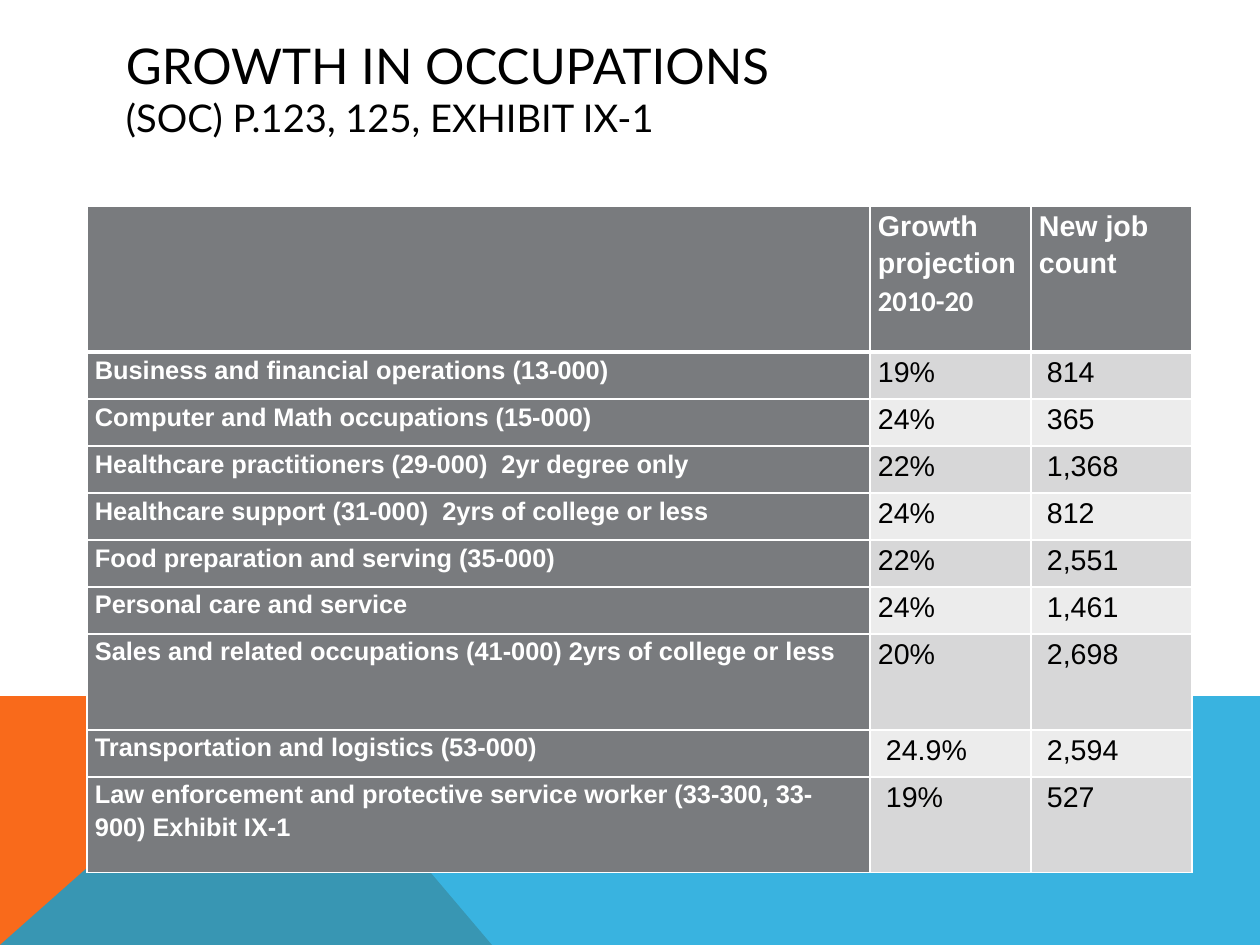
from dataclasses import dataclass

from lxml import etree
from pptx import Presentation
from pptx.dml.color import RGBColor
from pptx.enum.text import MSO_ANCHOR
from pptx.oxml.ns import qn
from pptx.slide import Slide
from pptx.table import _Cell
from pptx.text.text import _Paragraph
from pptx.util import Pt

MIDDLE = MSO_ANCHOR.MIDDLE
EMU_PER_PX = 8000
SLIDE_WIDTH, SLIDE_HEIGHT = 1260, 945
BAND_TOP = 696
COLUMN_WIDTHS = (783, 161, 161)
HEADER_HEIGHT, ROW_HEIGHT, TALL_HEIGHT = 146, 47, 96
TABLE_LEFT, TABLE_TOP = 87, 206
INSET, DEEP_INSET = 8, 16


@dataclass(frozen=True)
class Theme:
    orange: str = "F96A1B"
    blue: str = "08A1D9"
    gray: str = "797B7E"
    odd_row: str = "D7D7D8"
    even_row: str = "ECECEC"
    white: str = "FFFFFF"
    black: str = "000000"
    heading_font: str = "Lato"
    body_font: str = "Arial"
    years_font: str = "Calibri"
    title_size: int = 31
    subtitle_size: int = 24
    value_size: int = 18
    label_size: int = 16
    blue_alpha: int = 80
    rule_width: int = 1
    header_rule_width: int = 3
    line_spacing: float = 1.15


@dataclass(frozen=True)
class Band:
    points: tuple[tuple[int, int], ...]
    color: str
    alpha: int = 100


@dataclass(frozen=True)
class TextStyle:
    size: int
    color: str
    font: str
    bold: bool = False


@dataclass(frozen=True)
class Occupation:
    label: str
    growth: str
    jobs: str
    height: int = ROW_HEIGHT
    growth_inset: int = INSET


THEME = Theme()
TITLE = TextStyle(THEME.title_size, THEME.black, THEME.heading_font)
SUBTITLE = TextStyle(THEME.subtitle_size, THEME.black, THEME.heading_font)
HEADER = TextStyle(THEME.value_size, THEME.white, THEME.body_font, True)
YEARS = TextStyle(THEME.value_size, THEME.white, THEME.years_font, True)
LABEL = TextStyle(THEME.label_size, THEME.white, THEME.body_font, True)
VALUE = TextStyle(THEME.value_size, THEME.black, THEME.body_font)

BANDS = (
    Band(((0, 945), (0, BAND_TOP), (281, BAND_TOP), (492, 945)), THEME.orange),
    Band(((0, 945), (281, BAND_TOP), (1260, BAND_TOP), (1260, 945)),
         THEME.blue, THEME.blue_alpha),
)
HEADINGS = (
    (),
    (("Growth projection", HEADER), ("2010-20", YEARS)),
    (("New job count", HEADER),),
)
OCCUPATIONS = (
    Occupation("Business and financial operations (13-000)", "19%", "814"),
    Occupation("Computer and Math occupations (15-000)", "24%", "365"),
    Occupation("Healthcare practitioners (29-000)  2yr degree only", "22%", "1,368"),
    Occupation("Healthcare support (31-000)  2yrs of college or less", "24%", "812"),
    Occupation("Food preparation and serving (35-000)", "22%", "2,551"),
    Occupation("Personal care and service", "24%", "1,461"),
    Occupation("Sales and related occupations (41-000) 2yrs of college or less",
               "20%", "2,698", TALL_HEIGHT),
    Occupation("Transportation and logistics (53-000)", "24.9%", "2,594",
               growth_inset=DEEP_INSET),
    Occupation("Law enforcement and protective service worker (33-300, 33-900) Exhibit IX-1",
               "19%", "527", TALL_HEIGHT, DEEP_INSET),
)


def px(length: int) -> int:
    return length * EMU_PER_PX


def set_values(target: object, values: dict[str, object]) -> None:
    for name, value in values.items():
        setattr(target, name, value)


def add_run(paragraph: _Paragraph, text: str, style: TextStyle) -> None:
    run = paragraph.add_run()
    run.text = text
    set_values(run.font, {"size": Pt(style.size), "name": style.font, "bold": style.bold})
    run.font.color.rgb = RGBColor.from_string(style.color)


def draw_band(slide: Slide, band: Band) -> None:
    start, *rest = band.points
    builder = slide.shapes.build_freeform(*start, scale=EMU_PER_PX)
    builder.add_line_segments(rest, close=True)
    shape = builder.convert_to_shape()
    shape.shadow.inherit = False
    shape.line.fill.background()
    shape.fill.solid()
    shape.fill.fore_color.rgb = RGBColor.from_string(band.color)
    if band.alpha < 100:
        color = shape.fill._xPr.find(qn("a:solidFill"))[0]
        etree.SubElement(color, qn("a:alpha"), val=str(band.alpha * 1000))


def draw_title(slide: Slide) -> None:
    frame = slide.shapes.add_textbox(px(113), px(50), px(1037), px(75)).text_frame
    set_values(frame, {
        "word_wrap": True, "vertical_anchor": MIDDLE,
        "margin_left": px(13), "margin_right": px(13),
        "margin_top": px(7), "margin_bottom": px(7),
    })
    heading = frame.paragraphs[0]
    add_run(heading, "GROWTH IN OCCUPATIONS", TITLE)
    heading.add_line_break()
    add_run(heading, "(SOC) P.123, 125, EXHIBIT IX-1", SUBTITLE)


def draw_borders(cell: _Cell, row: int) -> None:
    properties = cell._tc.get_or_add_tcPr()
    for side in "LRTB":
        heavy = (row, side) in ((0, "B"), (1, "T"))
        width = THEME.header_rule_width if heavy else THEME.rule_width
        rule = etree.SubElement(properties, qn(f"a:ln{side}"), w=str(Pt(width)))
        fill = etree.SubElement(rule, qn("a:solidFill"))
        etree.SubElement(fill, qn("a:srgbClr"), val=THEME.white)


def fill_cell(cell: _Cell, row: int, lines: tuple[tuple[str, TextStyle], ...],
              color: str, inset: int = INSET) -> None:
    set_values(cell, {"margin_left": px(inset), "margin_right": px(INSET),
                      "margin_top": 0, "margin_bottom": 0})
    draw_borders(cell, row)
    cell.fill.solid()
    cell.fill.fore_color.rgb = RGBColor.from_string(color)
    for index, (text, style) in enumerate(lines):
        frame = cell.text_frame
        paragraph = frame.add_paragraph() if index else frame.paragraphs[0]
        paragraph.line_spacing = THEME.line_spacing
        add_run(paragraph, text, style)


def draw_table(slide: Slide) -> None:
    heights = (HEADER_HEIGHT, *(occupation.height for occupation in OCCUPATIONS))
    table = slide.shapes.add_table(
        len(heights), len(COLUMN_WIDTHS), px(TABLE_LEFT), px(TABLE_TOP),
        px(sum(COLUMN_WIDTHS)), px(sum(heights))).table
    set_values(table, {"first_row": True, "first_col": True, "horz_banding": False})
    for column, width in zip(table.columns, COLUMN_WIDTHS):
        column.width = px(width)
    for row, height in zip(table.rows, heights):
        row.height = px(height)
    for column, lines in enumerate(HEADINGS):
        fill_cell(table.cell(0, column), 0, lines, THEME.gray)
    for row, occupation in enumerate(OCCUPATIONS, start=1):
        shade = THEME.odd_row if row % 2 else THEME.even_row
        fill_cell(table.cell(row, 0), row, ((occupation.label, LABEL),), THEME.gray)
        fill_cell(table.cell(row, 1), row, ((occupation.growth, VALUE),), shade,
                  occupation.growth_inset)
        fill_cell(table.cell(row, 2), row, ((occupation.jobs, VALUE),), shade, DEEP_INSET)


def main() -> None:
    deck = Presentation()
    set_values(deck, {"slide_width": px(SLIDE_WIDTH), "slide_height": px(SLIDE_HEIGHT)})
    slide = deck.slides.add_slide(deck.slide_layouts[6])
    for band in BANDS:
        draw_band(slide, band)
    draw_title(slide)
    draw_table(slide)
    deck.save("out.pptx")


if __name__ == "__main__":
    main()
